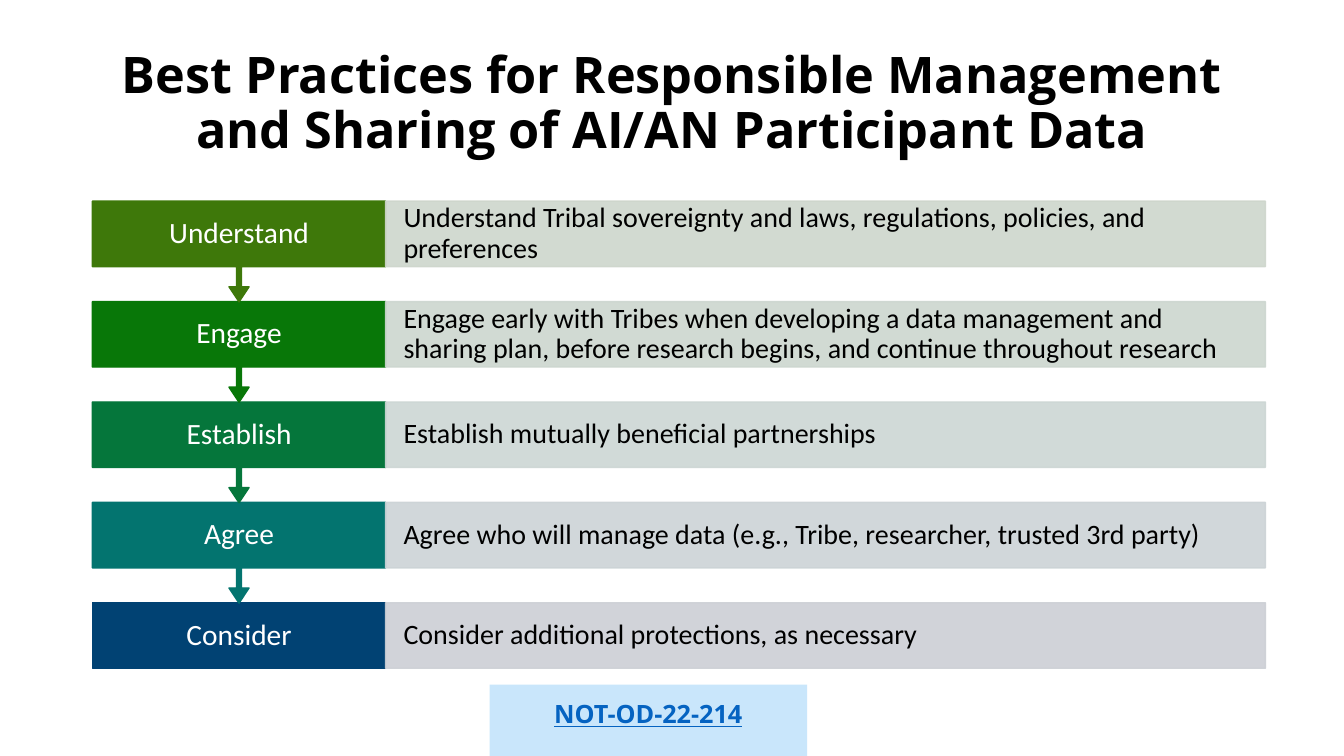
from dataclasses import dataclass

from lxml.etree import SubElement
from pptx import Presentation
from pptx.dml.color import RGBColor
from pptx.enum.shapes import MSO_SHAPE
from pptx.enum.text import MSO_ANCHOR, MSO_AUTO_SIZE, PP_ALIGN
from pptx.oxml.ns import qn
from pptx.util import Cm, Pt

TITLE = "Best Practices for Responsible Management and Sharing of AI/AN Participant Data"
NOTICE = "NOT-OD-22-214"
STEPS = [
    ("Understand", "Understand Tribal sovereignty and laws, regulations, policies, and preferences",
     "3E780A", "CED6CC"),
    ("Engage", "Engage early with Tribes when developing a data management and sharing plan, "
     "before research begins, and continue throughout research",
     "087708", "CCD6CF"),
    ("Establish", "Establish mutually beneficial partnerships", "05763B", "CCD6D4"),
    ("Agree", "Agree who will manage data (e.g., Tribe, researcher, trusted 3rd party)",
     "03746F", "CCD3D6"),
    ("Consider", "Consider additional protections, as necessary", "014273", "CCCFD5"),
]


@dataclass(frozen=True)
class Theme:
    head: str = "Open Sans"
    body: str = "Calibri"
    dark: str = "000000"
    light: str = "FFFFFF"
    link: str = "0563C1"
    pale: str = "C9E6FB"
    title: int = 36
    step: int = 21
    text: int = 20
    note: int = 18
    alpha: int = 90


LOOK = Theme()
LEFT, TOP, PITCH, HIGH = 2.33, 5.07, 2.53, 1.65
STEP_W, TEXT_W = 7.39, 22.17
ARROW = (0.05, 0.1, 0.15, 0.65)


def write(shape, text, font, size, color, align, pad, space=0.9, bold=False, line=False):
    frame = shape.text_frame
    frame.word_wrap = True
    frame.auto_size = MSO_AUTO_SIZE.NONE
    frame.vertical_anchor = MSO_ANCHOR.MIDDLE
    frame.margin_left = frame.margin_right = Cm(pad)
    frame.margin_top = frame.margin_bottom = Cm(0)
    para = frame.paragraphs[0]
    para.alignment = align
    para.line_spacing = space
    run = para.add_run()
    run.text = text
    run.font.name = font
    run.font.size = Pt(size)
    run.font.bold = bold
    run.font.underline = line
    run.font.color.rgb = RGBColor.from_string(color)
    return frame


def block(slide, kind, box, color, edge=True, alpha=None):
    shape = slide.shapes.add_shape(kind, *map(Cm, box))
    shape.shadow.inherit = False
    shape.fill.solid()
    shape.fill.fore_color.rgb = RGBColor.from_string(color)
    if edge:
        shape.line.width = Pt(1)
        shape.line.color.rgb = RGBColor.from_string(color)
    else:
        shape.line.fill.background()
    if alpha:
        for tint in shape.element.spPr.iter(qn("a:srgbClr")):
            SubElement(tint, qn("a:alpha")).set("val", str(alpha * 1000))
    return shape


def draw_step(slide, index):
    name, text, deep, soft = STEPS[index]
    top = TOP + index * PITCH
    last = index == len(STEPS) - 1
    kind = MSO_SHAPE.RECTANGLE if last else MSO_SHAPE.DOWN_ARROW_CALLOUT
    high = HIGH if last else HIGH / ARROW[-1]
    label = block(slide, kind, (LEFT, top, STEP_W, high), deep)
    if not last:
        for spot, value in enumerate(ARROW):
            label.adjustments[spot] = value
    write(label, name, LOOK.body, LOOK.step, LOOK.light, PP_ALIGN.CENTER, 0.53)
    bar = block(slide, MSO_SHAPE.RECTANGLE, (LEFT + STEP_W, top, TEXT_W, HIGH),
                soft, alpha=LOOK.alpha)
    write(bar, text, LOOK.body, LOOK.text, LOOK.dark, PP_ALIGN.LEFT, 0.45)


def main():
    deck = Presentation()
    deck.slide_width, deck.slide_height = Cm(33.87), Cm(19.05)
    slide = deck.slides.add_slide(deck.slide_layouts[5])
    title = slide.shapes.title
    title.left, title.top, title.width, title.height = map(Cm, (LEFT, 1.06, 29.21, 3.16))
    write(title, TITLE, LOOK.head, LOOK.title, LOOK.dark, PP_ALIGN.CENTER, 0.25, bold=True)

    for index in reversed(range(len(STEPS))):
        draw_step(slide, index)

    note = block(slide, MSO_SHAPE.RECTANGLE, (12.34, 17.25, 8, 1.8), LOOK.pale, edge=False)
    frame = write(note, NOTICE, LOOK.head, LOOK.note, LOOK.link, PP_ALIGN.CENTER, 0.25,
                  space=1.0, bold=True, line=True)
    frame.vertical_anchor = MSO_ANCHOR.TOP
    frame.margin_top = Cm(0.35)
    deck.save("out.pptx")


if __name__ == "__main__":
    main()
